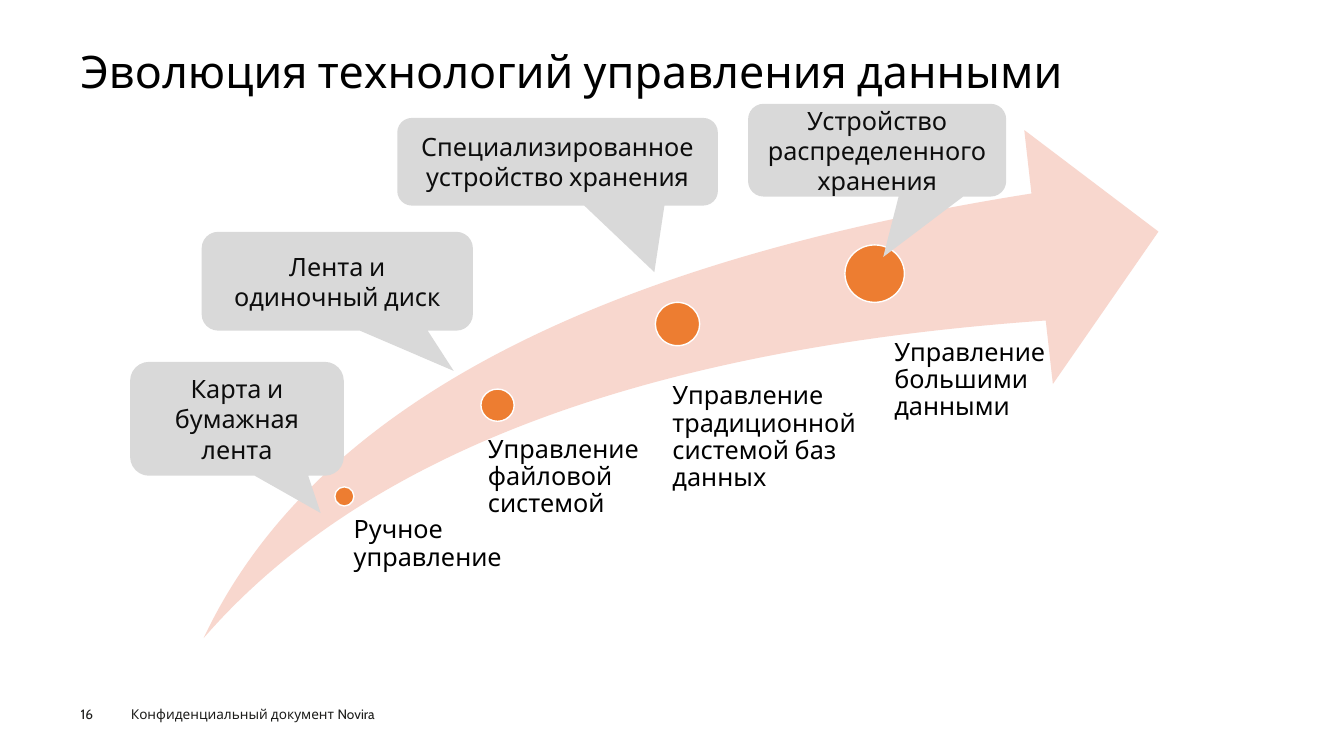
import pptx
import pptx.util
import pptx.dml.color
import pptx.enum.shapes
import pptx.enum.text

Inches, Pt = pptx.util.Inches, pptx.util.Pt
RGBColor = pptx.dml.color.RGBColor
SHAPE = pptx.enum.shapes.MSO_SHAPE
ALIGN = pptx.enum.text.PP_ALIGN
ANCHOR = pptx.enum.text.MSO_ANCHOR

BLACK = RGBColor(0x00, 0x00, 0x00)
INK = RGBColor(0x1D, 0x1D, 0x1B)
CALLOUT_INK = RGBColor(0x0D, 0x0D, 0x0D)
WHITE = RGBColor(0xFF, 0xFF, 0xFF)
PINK = RGBColor(0xF8, 0xD7, 0xCE)
ORANGE = RGBColor(0xED, 0x7D, 0x31)
GRAY = RGBColor(0xD9, 0xD9, 0xD9)

# Content: boxes are left, top, width, height in inches
TITLE = ("Эволюция технологий управления данными", (0.8, 0.49, 11.73, 0.54))
FOOTER = ("Конфиденциальный документ Novira", (1.2, 6.95, 3.44, 0.26))
PAGE = ("16", (0.8, 7, 0.55, 0.16))
ARROW = (2.02, 1.29, 9.47, 5.04)

# Stages: label, label box, left inset, dot box
STAGES = [
    ("Ручное управление", (3.41, 5.13, 1.63, 1.2), 0.1, (3.32, 4.83, 0.19, 0.19)),
    ("Управление файловой системой", (4.66, 4.33, 2.01, 1.46), 0.18,
     (4.77, 3.86, 0.33, 0.32)),
    ("Управление традиционной системой баз данных", (6.44, 3.8, 2.26, 2.16), 0.23,
     (6.5, 3, 0.44, 0.43)),
    ("Управление большими данными", (8.56, 3.37, 2.01, 2.77), 0.31,
     (8.38, 2.43, 0.59, 0.57)),
]

# Callouts: text, box, tip of the pointer (x, y)
CALLOUTS = [
    ("Карта и бумажная лента", (1.29, 3.59, 2.12, 1.13), (3.18, 5.09)),
    ("Лента и одиночный диск", (2, 2.3, 2.69, 0.98), (4.5, 3.68)),
    ("Специализированное устройство хранения", (3.94, 1.17, 3.18, 0.87), (6.49, 2.7)),
    ("Устройство распределенного хранения", (7.42, 1.03, 2.56, 0.92), (8.76, 2.55)),
]


def set_text(sp, text, size, color, insets=(0, 0, 0, 0), anchor=ANCHOR.TOP, **para):
    tf = sp.text_frame
    left, top, right, bottom = map(Inches, insets)
    frame = {"word_wrap": True, "vertical_anchor": anchor, "margin_left": left,
             "margin_top": top, "margin_right": right, "margin_bottom": bottom}
    for name, value in frame.items():
        setattr(tf, name, value)
    p = tf.paragraphs[0]
    for name, value in para.items():
        setattr(p, name, value)
    r = p.add_run()
    r.text = text
    for name, value in {"size": Pt(size), "name": "Cabin"}.items():
        setattr(r.font, name, value)
    r.font.color.rgb = color


def add_text(s, text, box, size, color, **fmt):
    set_text(s.shapes.add_textbox(*map(Inches, box)), text, size, color, **fmt)


def add_filled(s, kind, box, fill, line=None):
    sp = s.shapes.add_shape(kind, *map(Inches, box))
    sp.shadow.inherit = False
    sp.fill.solid()
    sp.fill.fore_color.rgb = fill
    if line is None:
        sp.line.fill.background()
    else:
        sp.line.color.rgb = line
        sp.line.width = Pt(1)
    return sp


def main():
    prs = pptx.Presentation()
    prs.slide_width, prs.slide_height = Inches(13.33), Inches(7.5)
    s = prs.slides.add_slide(prs.slide_layouts[6])

    # Title and footer
    add_text(s, *FOOTER, 9.7, INK, insets=(0.1, 0.05, 0.1, 0.05))
    add_text(s, *PAGE, 9.7, INK)
    add_text(s, *TITLE, 32, BLACK, line_spacing=0.9)

    # Growth arrow
    arrow = add_filled(s, SHAPE.SWOOSH_ARROW, ARROW, PINK)
    for i in range(2):
        arrow.adjustments[i] = 0.25

    # Stages along the arrow
    for label, box, inset, dot in STAGES:
        add_filled(s, SHAPE.OVAL, dot, ORANGE, WHITE)
        add_text(s, label, box, 18, BLACK, insets=(inset, 0, 0, 0), line_spacing=0.9)

    # Callouts: pointer offsets are measured from the box centre
    for text, box, (tip_x, tip_y) in CALLOUTS:
        sp = add_filled(s, SHAPE.ROUNDED_RECTANGULAR_CALLOUT, box, GRAY)
        left, top, width, height = box
        sp.adjustments[0] = (tip_x - left) / width - 0.5
        sp.adjustments[1] = (tip_y - top) / height - 0.5
        set_text(sp, text, 18, CALLOUT_INK, insets=(0.1, 0.05, 0.1, 0.05),
                 anchor=ANCHOR.MIDDLE, alignment=ALIGN.CENTER)

    prs.save("out.pptx")


if __name__ == "__main__":
    main()
